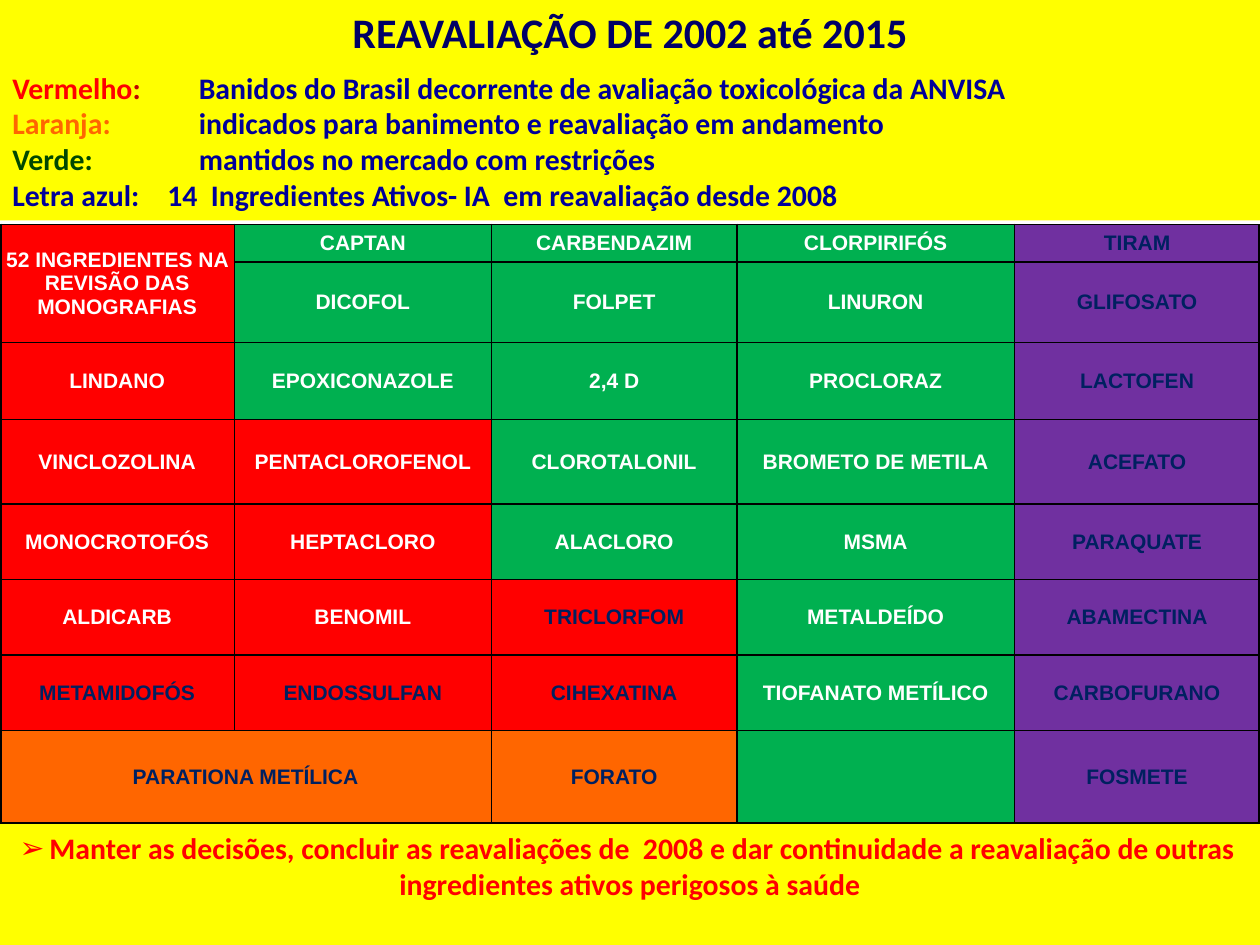
import pptx
import pptx.util
import pptx.dml.color
import pptx.enum.shapes
import pptx.enum.text
import lxml.etree

RGBColor = pptx.dml.color.RGBColor
Pt = pptx.util.Pt
Align = pptx.enum.text.PP_ALIGN
Anchor = pptx.enum.text.MSO_ANCHOR

YELLOW = RGBColor(0xFF, 0xFF, 0x00)
RED = RGBColor(0xFF, 0x00, 0x00)
DARK_RED = RGBColor(0xC0, 0x00, 0x00)
ORANGE = RGBColor(0xFF, 0x66, 0x00)
GREEN = RGBColor(0x00, 0xB0, 0x50)
DARK_GREEN = RGBColor(0x00, 0x48, 0x00)
PURPLE = RGBColor(0x70, 0x30, 0xA0)
NAVY = RGBColor(0x00, 0x20, 0x60)
TITLE_BLUE = RGBColor(0x00, 0x00, 0x66)
BLUE = RGBColor(0x00, 0x00, 0x99)
WHITE = RGBColor(0xFF, 0xFF, 0xFF)
BLACK = RGBColor(0x00, 0x00, 0x00)

UNIT = pptx.util.Inches(0.1)
COLUMNS, ROWS = 100, 75
NS = "http://schemas.openxmlformats.org/drawingml/2006/main"

CELL_STYLES = {
    "R": (RED, WHITE),
    "r": (RED, NAVY),
    "G": (GREEN, WHITE),
    "P": (PURPLE, NAVY),
    "O": (ORANGE, NAVY),
}
COLUMN_WIDTHS = [18.6, 20.4, 19.5, 22, 19.5]
INGREDIENTS = [
    (3, "RGGGP", ["52 INGREDIENTES NA REVISÃO DAS MONOGRAFIAS", "CAPTAN", "CARBENDAZIM", "CLORPIRIFÓS", "TIRAM"]),
    (6.4, "RGGGP", ["", "DICOFOL", "FOLPET", "LINURON", "GLIFOSATO"]),
    (6.1, "RGGGP", ["LINDANO", "EPOXICONAZOLE", "2,4 D", "PROCLORAZ", "LACTOFEN"]),
    (6.7, "RRGGP", ["VINCLOZOLINA", "PENTACLOROFENOL", "CLOROTALONIL", "BROMETO DE METILA", "ACEFATO"]),
    (6, "RRGGP", ["MONOCROTOFÓS", "HEPTACLORO", "ALACLORO", "MSMA", "PARAQUATE"]),
    (6, "RRrGP", ["ALDICARB", "BENOMIL", "TRICLORFOM", "METALDEÍDO", "ABAMECTINA"]),
    (6, "rrrGP", ["METAMIDOFÓS", "ENDOSSULFAN", "CIHEXATINA", "TIOFANATO METÍLICO", "CARBOFURANO"]),
    (7.4, "OOOGP", ["PARATIONA METÍLICA", "", "FORATO", "", "FOSMETE"]),
]
LEGEND = [
    (14.8, [("Vermelho", RED), (":\t", DARK_RED),
            ("Banidos do Brasil decorrente de avaliação toxicológica da ANVISA", BLUE)]),
    (14.8, [("Laranja:\t", ORANGE), ("indicados para banimento e reavaliação em andamento", BLUE)]),
    (14.8, [("Verde:\t", DARK_GREEN), ("mantidos no mercado com restrições", BLUE)]),
    (12.3, [("Letra azul:\t14  Ingredientes Ativos- IA  em reavaliação desde 2008", BLUE)]),
]


def grid(n):
    return round(n * UNIT)


def element(parent, tag, **attributes):
    return lxml.etree.SubElement(parent, f"{{{NS}}}{tag}", attributes)


def write(p, text, *, color, size=17, font="Calibri"):
    r = p.add_run()
    r.text = text
    r.font.size = Pt(size)
    r.font.name = font
    r.font.bold = True
    r.font.color.rgb = color


class Board:
    def __init__(self, prs):
        self.s = prs.slides.add_slide(prs.slide_layouts[6])
        self.panel_fill = YELLOW
        self.cell_font = {"size": 12, "font": "Arial"}

    def panel(self, top, height):
        sp = self.s.shapes.add_shape(
            pptx.enum.shapes.MSO_SHAPE.RECTANGLE, 0, grid(top), grid(COLUMNS), grid(height))
        sp.shadow.inherit = False
        sp.fill.solid()
        sp.fill.fore_color.rgb = self.panel_fill
        sp.line.fill.background()
        tf = sp.text_frame
        tf.word_wrap = True
        tf.vertical_anchor = Anchor.TOP
        return tf

    def legend_line(self, tf, tab, parts):
        p = tf.add_paragraph()
        p.alignment = Align.LEFT
        tabs = element(p._p.get_or_add_pPr(), "tabLst")
        element(tabs, "tab", pos=str(grid(tab)), algn="l")
        for text, color in parts:
            write(p, text, color=color)

    def bullet(self, p, mark):
        p.alignment = Align.CENTER
        pPr = p._p.get_or_add_pPr()
        element(pPr, "buFont", typeface="Arial")
        element(pPr, "buChar", char=mark)

    def border(self, cell, side, width):
        ln = element(cell._tc.get_or_add_tcPr(), f"ln{side}", w=str(Pt(width)))
        element(element(ln, "solidFill"), "srgbClr", val=str(BLACK))

    def cell(self, cell, text, style, thick_sides):
        for side in "LRTB":
            self.border(cell, side, 2.25 if side in thick_sides else 1)
        fill, color = CELL_STYLES[style]
        cell.fill.solid()
        cell.fill.fore_color.rgb = fill
        cell.vertical_anchor = Anchor.MIDDLE
        cell.margin_left = cell.margin_right = grid(0.2)
        cell.margin_top = cell.margin_bottom = grid(0.2)
        if text:
            p = cell.text_frame.paragraphs[0]
            p.alignment = Align.CENTER
            write(p, text, color=color, **self.cell_font)

    def table(self, top, widths, rows, merges):
        height = sum(row[0] for row in rows)
        table = self.s.shapes.add_table(
            len(rows), len(widths), 0, grid(top), grid(COLUMNS), grid(height)).table
        table.first_row = table.horz_banding = False
        for column, width in zip(table.columns, widths):
            column.width = grid(width)
        last_row, last_column = len(rows) - 1, len(widths) - 1
        for i, (row_height, styles, names) in enumerate(rows):
            table.rows[i].height = grid(row_height)
            for j, (style, name) in enumerate(zip(styles, names)):
                edges = {"L": j == 0, "R": j == last_column, "B": i == last_row}
                thick_sides = [side for side, outer in edges.items() if outer]
                self.cell(table.cell(i, j), name, style, thick_sides)
        for start, end in merges:
            table.cell(*start).merge(table.cell(*end))


def main():
    prs = pptx.Presentation()
    prs.slide_width, prs.slide_height = grid(COLUMNS), grid(ROWS)
    board = Board(prs)

    tf = board.panel(0, 17.5)
    p = tf.paragraphs[0]
    p.alignment = Align.CENTER
    p.space_after = Pt(7.3)
    write(p, "REAVALIAÇÃO DE 2002 até 2015", color=TITLE_BLUE, size=24)
    for tab, parts in LEGEND:
        board.legend_line(tf, tab, parts)

    board.table(17.8, COLUMN_WIDTHS, INGREDIENTS, [((0, 0), (1, 0)), ((7, 0), (7, 1))])

    p = board.panel(65.4, 9.6).paragraphs[0]
    board.bullet(p, "➢")
    write(p, "Manter as decisões, concluir as reavaliações de  2008 e dar continuidade a "
             "reavaliação de outras ingredientes ativos perigosos à saúde", color=RED)

    prs.save("out.pptx")


if __name__ == "__main__":
    main()
